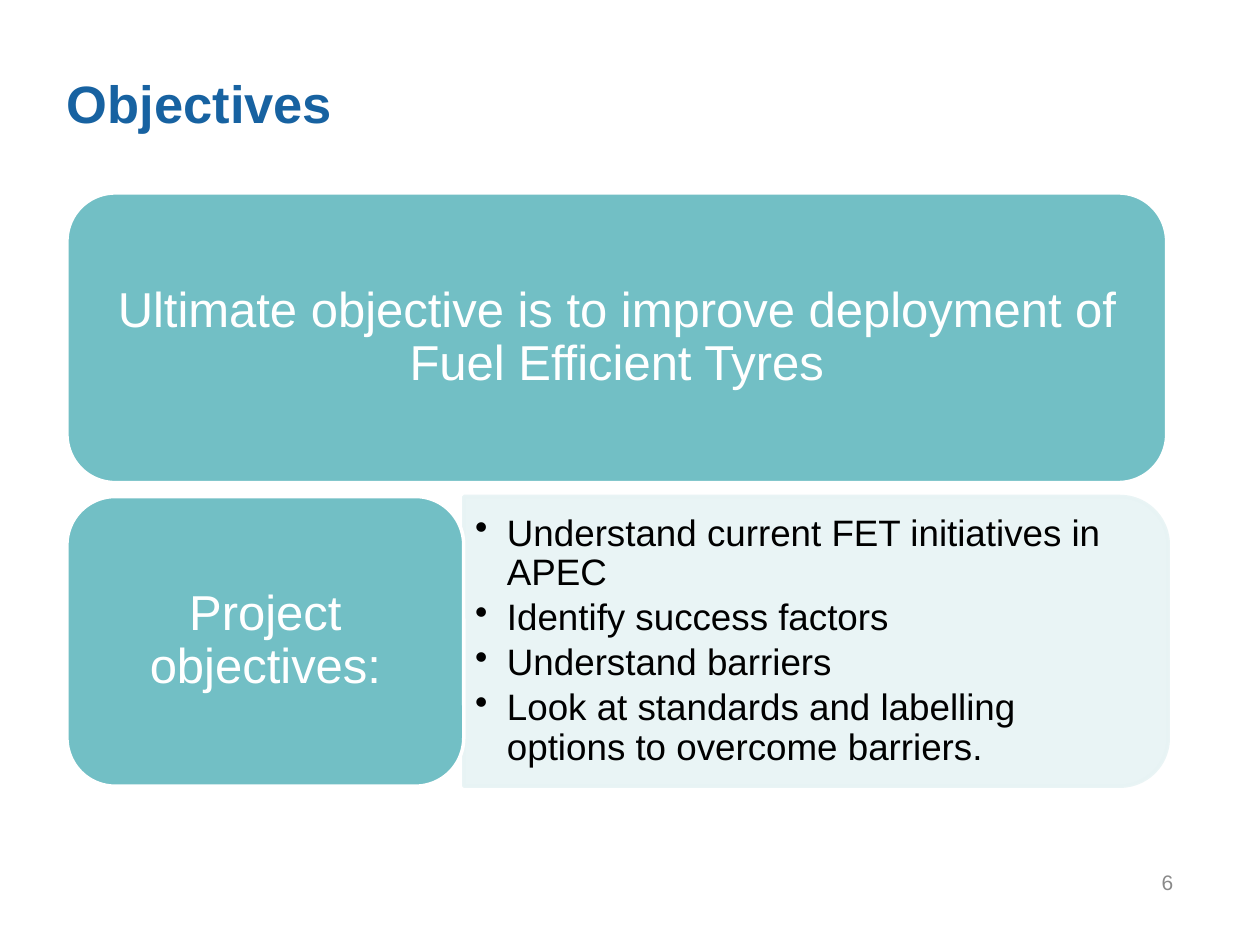
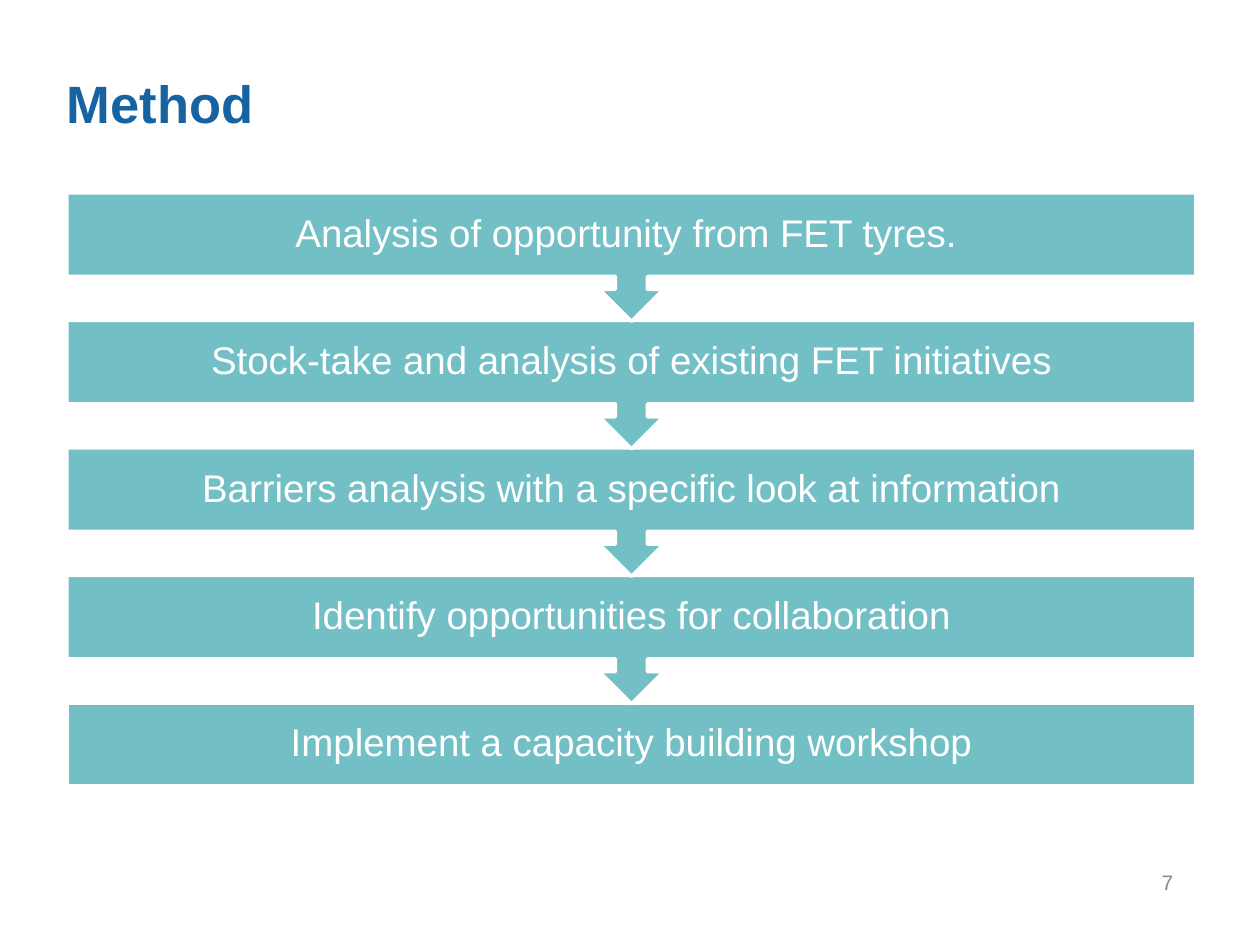
"""Build the Objectives and Method slides of the tyre project deck."""
from lxml.etree import SubElement
from pptx import Presentation
from pptx.dml.color import RGBColor
from pptx.enum.shapes import MSO_SHAPE as Preset
from pptx.enum.text import MSO_ANCHOR as Anchor, PP_ALIGN as Align
from pptx.oxml.ns import qn
from pptx.util import Cm, Pt

GOAL = "Ultimate objective is to improve deployment of Fuel Efficient Tyres"
PROJECT_LABEL = "Project objectives:"
PROJECT_OBJECTIVES = [
    "Understand current FET initiatives in APEC",
    "Identify success factors",
    "Understand barriers",
    "Look at standards and labelling options to overcome barriers.",
]
STEPS = [
    "Analysis of opportunity from FET tyres. ",
    "Stock-take and analysis of existing FET initiatives",
    "Barriers analysis with a specific look at information",
    "Identify opportunities for collaboration",
    "Implement a capacity building workshop",
]

BLUE = RGBColor(0x17, 0x62, 0xA1)
TEAL = RGBColor(0x72, 0xBF, 0xC5)
PALE_TEAL = RGBColor(0xE7, 0xF3, 0xF4)
GREY = RGBColor(0x89, 0x89, 0x89)
WHITE = RGBColor(0xFF, 0xFF, 0xFF)
BLACK = RGBColor(0, 0, 0)

TITLE = {"size": Pt(30), "bold": True, "color": BLUE}
NUMBER = {"size": Pt(12), "color": GREY}
BOX_LABEL = {"size": Pt(28), "color": WHITE}
STEP_LABEL = {"size": Pt(22), "color": WHITE}
OBJECTIVE = {"size": Pt(21), "color": BLACK}

LEFT, TOP = 1.35, 3.89
BOX_HEIGHT, ROW_PITCH = 5.84, 6.12
GOAL_WIDTH, LABEL_WIDTH, PANEL_WIDTH = 22.17, 8.0, 14.2
PANEL_INSET = 0.28
STEP_WIDTH, STEP_HEIGHT, STEP_PITCH, LAST_HEIGHT = 22.76, 2.59, 2.57, 1.68
PANEL_OPACITY = "90000"


def write(holder, lines, style, align=Align.LEFT, anchor=Anchor.TOP,
          insets=(0, 0, 0, 0), spacing=1.0, after=0, bulleted=False):
    frame = holder.text_frame
    frame.word_wrap = True
    frame.vertical_anchor = anchor
    for side, inset in zip(("left", "top", "right", "bottom"), insets):
        setattr(frame, f"margin_{side}", Cm(inset))
    frame.text = "\n".join(lines)
    for paragraph in frame.paragraphs:
        if bulleted:
            props = paragraph._p.get_or_add_pPr()
            props.set("marL", str(Cm(0.64)))
            props.set("indent", str(Cm(-0.64)))
            SubElement(props, qn("a:buChar"), char="•")
        for name, setting in {"alignment": align, "line_spacing": spacing,
                              "space_after": Pt(after)}.items():
            setattr(paragraph, name, setting)
        font = paragraph.runs[0].font
        font.name = "Arial"
        for name, setting in style.items():
            if name == "color":
                font.color.rgb = setting
            else:
                setattr(font, name, setting)


def add_block(slide, preset, bounds, fill=TEAL, line=WHITE):
    block = slide.shapes.add_shape(preset, *map(Cm, bounds))
    block.shadow.inherit = False
    block.fill.solid()
    block.fill.fore_color.rgb = fill
    block.line.color.rgb = line
    block.line.width = Pt(2)
    return block


def add_label(slide, preset, bounds, label, style, insets):
    write(add_block(slide, preset, bounds), [label], style, Align.CENTER,
          Anchor.MIDDLE, insets, spacing=0.9)


def add_text(slide, bounds, lines, style, **layout):
    write(slide.shapes.add_textbox(*map(Cm, bounds)), lines, style, **layout)


def add_page(deck, title, number):
    slide = deck.slides.add_slide(deck.slide_layouts[6])
    add_text(slide, (LEFT, 1.35, 21.97, 1.19), [title], TITLE,
             insets=(0, 0.09, 0, 0))
    add_text(slide, (17.98, 17.15, 5.92, 1.02), [str(number)], NUMBER,
             align=Align.RIGHT, anchor=Anchor.BOTTOM,
             insets=(0.25, 0.13, 0.25, 0.13))
    return slide


def add_objectives_panel(slide, left, top):
    shift = (PANEL_WIDTH - BOX_HEIGHT) / 2
    panel = add_block(slide, Preset.ROUND_2_SAME_RECTANGLE,
                      (left + shift, top - shift, BOX_HEIGHT, PANEL_WIDTH),
                      PALE_TEAL, PALE_TEAL)
    panel.rotation = 90
    for color in panel._element.spPr.iter(qn("a:srgbClr")):
        SubElement(color, qn("a:alpha"), val=PANEL_OPACITY)
    add_text(slide, (left, top + PANEL_INSET, PANEL_WIDTH - PANEL_INSET,
                     BOX_HEIGHT - 2 * PANEL_INSET),
             PROJECT_OBJECTIVES, OBJECTIVE, anchor=Anchor.MIDDLE,
             insets=(0.23, 0.1, 0.23, 0.1), spacing=0.9, after=3,
             bulleted=True)


def build_objectives(deck):
    slide = add_page(deck, "Objectives", 6)
    row_two = TOP + ROW_PITCH
    insets = (0.3, 0.15, 0.3, 0.15)
    add_label(slide, Preset.ROUNDED_RECTANGLE,
              (LEFT, TOP, GOAL_WIDTH, BOX_HEIGHT), GOAL, BOX_LABEL, insets)
    add_objectives_panel(slide, LEFT + LABEL_WIDTH, row_two)
    add_label(slide, Preset.ROUNDED_RECTANGLE,
              (LEFT, row_two, LABEL_WIDTH, BOX_HEIGHT), PROJECT_LABEL,
              BOX_LABEL, insets)


def build_method(deck):
    slide = add_page(deck, "Method", 7)
    last = len(STEPS) - 1
    for index, step in reversed(list(enumerate(STEPS))):
        preset, height = ((Preset.RECTANGLE, LAST_HEIGHT) if index == last
                          else (Preset.DOWN_ARROW_CALLOUT, STEP_HEIGHT))
        add_label(slide, preset,
                  (LEFT, TOP + index * STEP_PITCH, STEP_WIDTH, height),
                  step, STEP_LABEL, (0.43, 0.43, 0.43, 0.43))


def main():
    deck = Presentation()
    deck.slide_width, deck.slide_height = Cm(25.4), Cm(19.05)
    build_objectives(deck)
    build_method(deck)
    deck.save("out.pptx")


if __name__ == "__main__":
    main()
